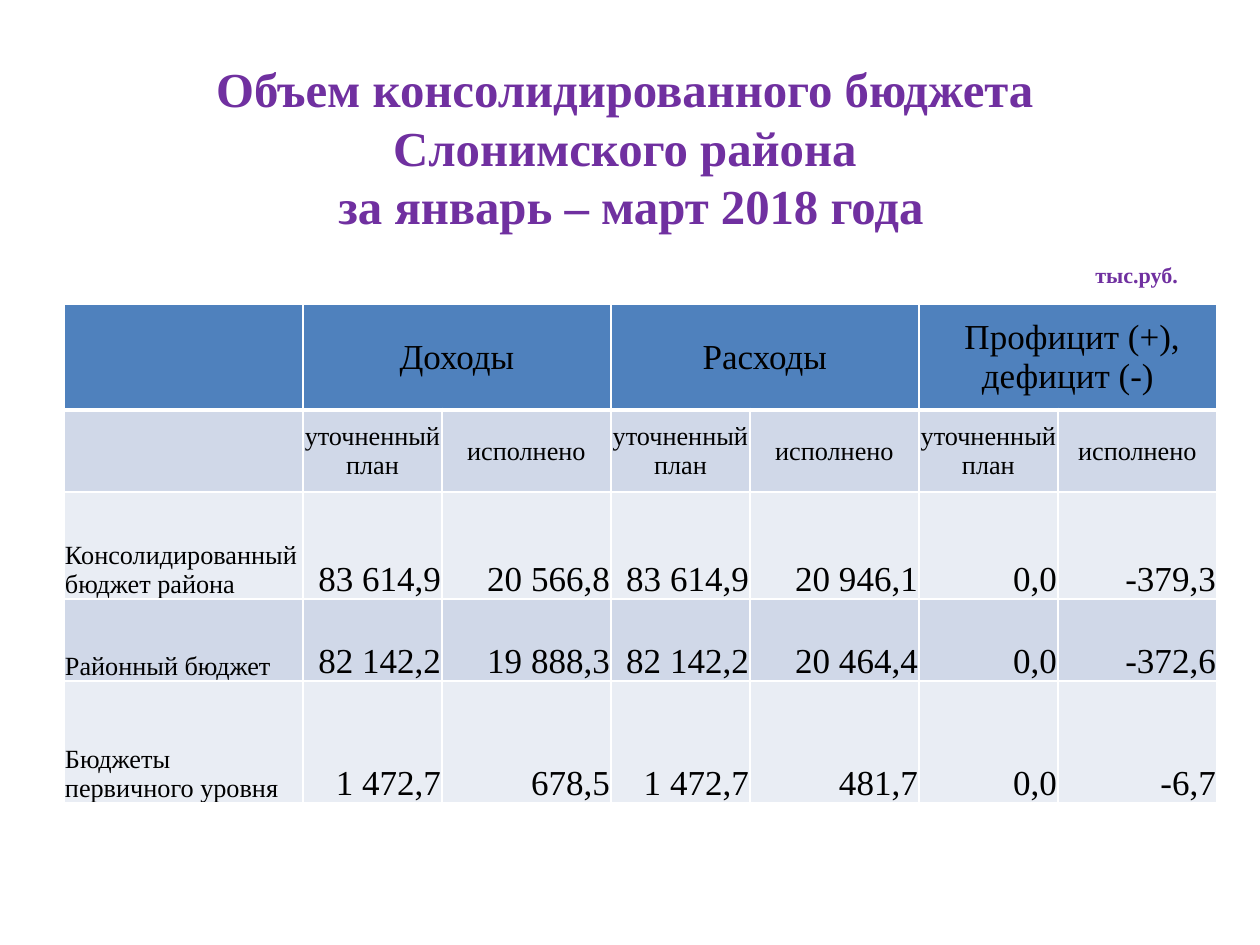
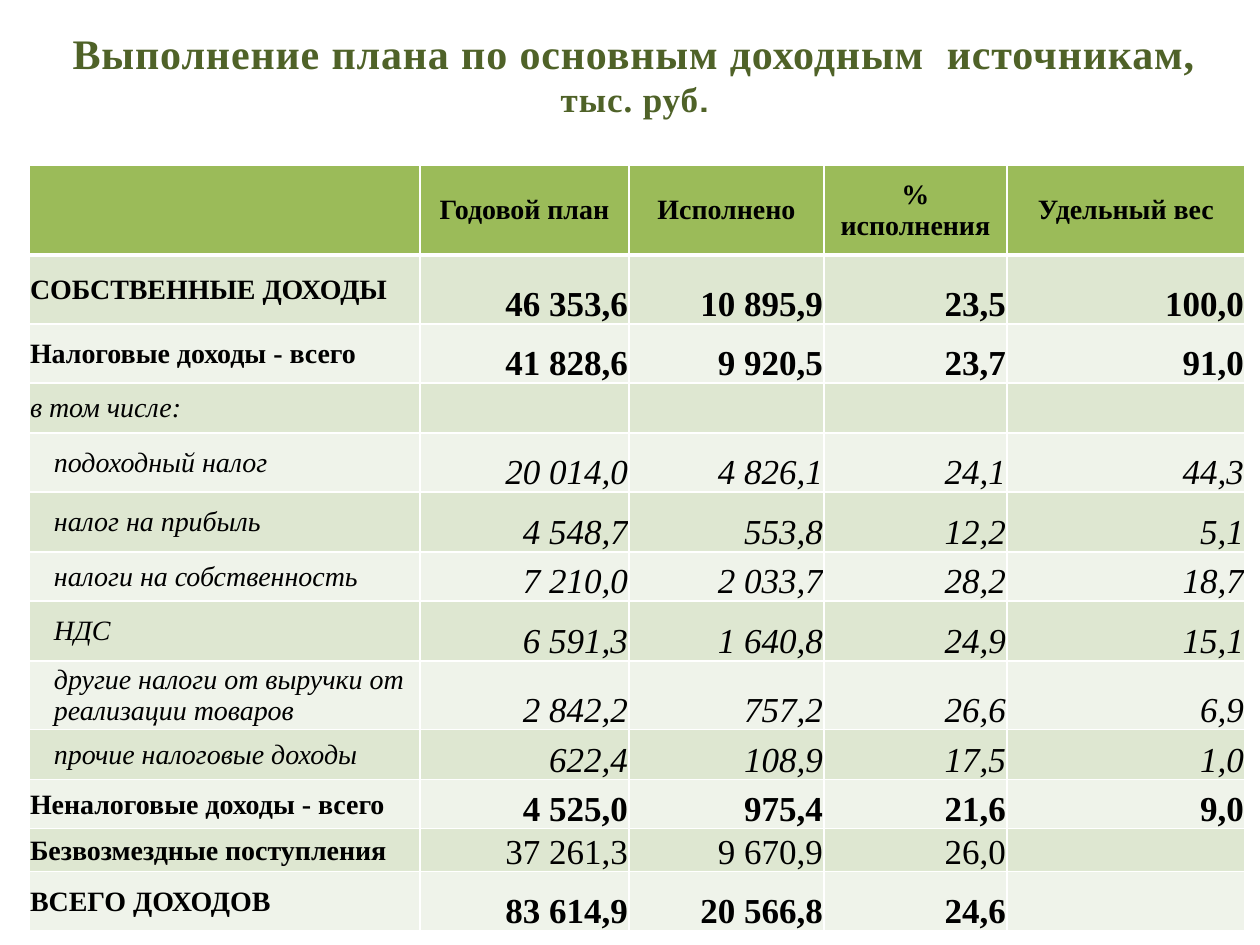
import pptx
import pptx.util
import pptx.dml.color
import pptx.enum.text
import pptx.oxml.ns
import lxml.etree

PX = 914400 / 126
SERIF = "Times New Roman"
WHITE, BLACK = "FFFFFF", "000000"
PURPLE, OLIVE = "7030A0", "4F6228"
BLUE_TABLE = ("4F81BD", "D0D8E8", "E9EDF4")
GREEN_TABLE = ("9BBB59", "DEE7D1", "EFF3EA")
LEFT, CENTER, RIGHT = (pptx.enum.text.PP_ALIGN.LEFT, pptx.enum.text.PP_ALIGN.CENTER,
                       pptx.enum.text.PP_ALIGN.RIGHT)
MIDDLE, BOTTOM = pptx.enum.text.MSO_ANCHOR.MIDDLE, pptx.enum.text.MSO_ANCHOR.BOTTOM

BUDGET_COLUMNS = [239, 139, 169, 139, 169, 139, 159]
BUDGET_GROUPS = ["Доходы", "Расходы", " Профицит (+),\nдефицит (-)"]
BUDGET_HEIGHTS = [106, 82, 107, 82, 122]
BUDGET_ROWS = [
    ("Консолидированный бюджет района",
     ["83 614,9", "20 566,8", "83 614,9", "20 946,1", "0,0", "-379,3"]),
    ("Районный бюджет",
     ["82 142,2", "19 888,3", "82 142,2", "20 464,4", "0,0", "-372,6"]),
    ("Бюджеты первичного уровня",
     ["1 472,7", "678,5", "1 472,7", "481,7", "0,0", "-6,7"]),
]

INCOME_COLUMNS = [391, 209, 195, 183, 238]
INCOME_HEADINGS = ["", "Годовой план", "Исполнено", "% исполнения", "Удельный вес"]
INCOME_HEADING_HEIGHT = 90
TOTAL = {"bold": True}
INTRO = {"italic": True}
DETAIL = {"italic": True, "indent": 25}
INCOME_ROWS = [
    (69, TOTAL, "СОБСТВЕННЫЕ ДОХОДЫ", ["46 353,6", "10 895,9", "23,5", "100,0"]),
    (59, TOTAL, "Налоговые доходы - всего", ["41 828,6", "9 920,5", "23,7", "91,0"]),
    (50, INTRO, "в том числе:", ["", "", "", ""]),
    (59, DETAIL, "подоходный налог", ["20 014,0", "4 826,1", "24,1", "44,3"]),
    (60, DETAIL, "налог на прибыль", ["4 548,7", "553,8", "12,2", "5,1"]),
    (49, DETAIL, "налоги на собственность", ["7 210,0", "2 033,7", "28,2", "18,7"]),
    (60, DETAIL, "НДС", ["6 591,3", "1 640,8", "24,9", "15,1"]),
    (69, DETAIL, "другие налоги от выручки от реализации товаров",
     ["2 842,2", "757,2", "26,6", "6,9"]),
    (50, DETAIL, "прочие налоговые доходы", ["622,4", "108,9", "17,5", "1,0"]),
    (49, TOTAL, "Неналоговые доходы - всего", ["4 525,0", "975,4", "21,6", "9,0"]),
    (41, TOTAL, "Безвозмездные поступления", ["37 261,3", "9 670,9", "26,0", ""]),
    (59, TOTAL, "ВСЕГО ДОХОДОВ", ["83 614,9", "20 566,8", "24,6", ""]),
]
PLAIN_VALUES = {"Безвозмездные поступления"}


def px(length):
    return pptx.util.Emu(round(length * PX))


def color(value):
    return pptx.dml.color.RGBColor.from_string(value)


def add_run(paragraph, text, size, tint=BLACK, bold=False, italic=False, font=SERIF):
    run = paragraph.add_run()
    run.text = text
    run.font.name = font
    run.font.size = pptx.util.Pt(size)
    run.font.bold = bold
    run.font.italic = italic
    run.font.color.rgb = color(tint)
    return run


def add_title_frame(slide, box):
    frame = slide.shapes.add_textbox(*map(px, box)).text_frame
    frame.word_wrap = True
    frame.vertical_anchor = MIDDLE
    frame.paragraphs[0].alignment = CENTER
    return frame


def add_borders(cell, bottom_width):
    properties = cell._tc.get_or_add_tcPr()
    for side, width in (("L", 1), ("R", 1), ("T", 1), ("B", bottom_width)):
        line = lxml.etree.SubElement(properties, pptx.oxml.ns.qn(f"a:ln{side}"),
                                     w=str(pptx.util.Pt(width)))
        solid = lxml.etree.SubElement(line, pptx.oxml.ns.qn("a:solidFill"))
        lxml.etree.SubElement(solid, pptx.oxml.ns.qn("a:srgbClr"), val=WHITE)


def write_cell(cell, text, size, alignment, anchor, bold=False, italic=False, indent=1):
    cell.vertical_anchor = anchor
    cell.margin_left = px(indent)
    for index, line in enumerate(text.split("\n") if text else []):
        frame = cell.text_frame
        paragraph = frame.add_paragraph() if index else frame.paragraphs[0]
        paragraph.alignment = alignment
        add_run(paragraph, line, size, bold=bold, italic=italic)


def add_grid(slide, left, top, widths, heights, palette):
    frame = slide.shapes.add_table(len(heights), len(widths), px(left), px(top),
                                   px(sum(widths)), px(sum(heights)))
    table = frame.table
    table.first_row = table.horz_banding = False
    for column, width in zip(table.columns, widths):
        column.width = px(width)
    heading_fill, *bands = palette
    for index, (row, height) in enumerate(zip(table.rows, heights)):
        row.height = px(height)
        for cell in row.cells:
            add_borders(cell, 1 if index else 3)
            cell.fill.solid()
            cell.fill.fore_color.rgb = color(bands[(index - 1) % 2] if index else heading_fill)
            cell.margin_left = cell.margin_right = cell.margin_top = px(1)
            cell.margin_bottom = 0
    return table


def add_budget_title(slide, box):
    frame = add_title_frame(slide, box)
    frame.margin_top, frame.margin_bottom = px(6), 0
    heading = frame.paragraphs[0]
    heading.line_spacing = pptx.util.Pt(33.4)
    lines = ["Объем консолидированного бюджета ", "Слонимского района ",
             "за январь – март 2018 года"]
    for index, line in enumerate(lines):
        if index:
            heading.add_line_break()
        add_run(heading, line, 27.9, PURPLE, bold=True)
    unit = frame.add_paragraph()
    unit.alignment = RIGHT
    unit.line_spacing = pptx.util.Pt(30.5)
    frame.margin_right = px(20)
    frame.margin_left = px(20)
    add_run(unit, "тыс.руб.", 12.6, PURPLE, bold=True)


def add_budget_table(slide, left, top):
    table = add_grid(slide, left, top, BUDGET_COLUMNS, BUDGET_HEIGHTS, BLUE_TABLE)
    for index, group in enumerate(BUDGET_GROUPS):
        first = 1 + 2 * index
        table.cell(0, first).merge(table.cell(0, first + 1))
        write_cell(table.cell(0, first), group, 20, CENTER, MIDDLE)
        for offset, heading in enumerate(["уточненный план", "исполнено"]):
            write_cell(table.cell(1, first + offset), heading, 15, CENTER, MIDDLE)
    for row, (label, values) in enumerate(BUDGET_ROWS, 2):
        write_cell(table.cell(row, 0), label, 15, LEFT, BOTTOM)
        for column, value in enumerate(values, 1):
            write_cell(table.cell(row, column), value, 20, RIGHT, BOTTOM)


def add_income_title(slide, box):
    paragraph = add_title_frame(slide, box).paragraphs[0]
    pieces = [("Выполнение плана по основным доходным  источникам, ", 24, SERIF),
              ("тыс. руб", 20, SERIF), (".", 20, "Roboto Slab")]
    for text, size, font in pieces:
        run = add_run(paragraph, text, size, OLIVE, bold=True, font=font)
        run._r.get_or_add_rPr().set("spc", "50")


def add_income_table(slide, left, top):
    heights = [INCOME_HEADING_HEIGHT] + [row[0] for row in INCOME_ROWS]
    table = add_grid(slide, left, top, INCOME_COLUMNS, heights, GREEN_TABLE)
    for column, heading in enumerate(INCOME_HEADINGS):
        write_cell(table.cell(0, column), heading, 16, CENTER, MIDDLE, bold=True)
    for row, (_, style, label, values) in enumerate(INCOME_ROWS, 1):
        write_cell(table.cell(row, 0), label, 16, LEFT, MIDDLE, **style)
        bold = style.get("bold", False) and label not in PLAIN_VALUES
        for column, value in enumerate(values, 1):
            write_cell(table.cell(row, column), value, 20, RIGHT, BOTTOM,
                       bold=bold, italic=style.get("italic", False))


def main():
    presentation = pptx.Presentation()
    presentation.slide_width, presentation.slide_height = px(1260), px(945)
    blank = presentation.slide_layouts[6]

    budget = presentation.slides.add_slide(blank)
    add_budget_title(budget, (64, 76, 1134, 189))
    add_budget_table(budget, 64, 304)

    income = presentation.slides.add_slide(blank)
    add_income_title(income, (29, 0, 1211, 147))
    add_income_table(income, 29, 165)

    presentation.save("out.pptx")


if __name__ == "__main__":
    main()
